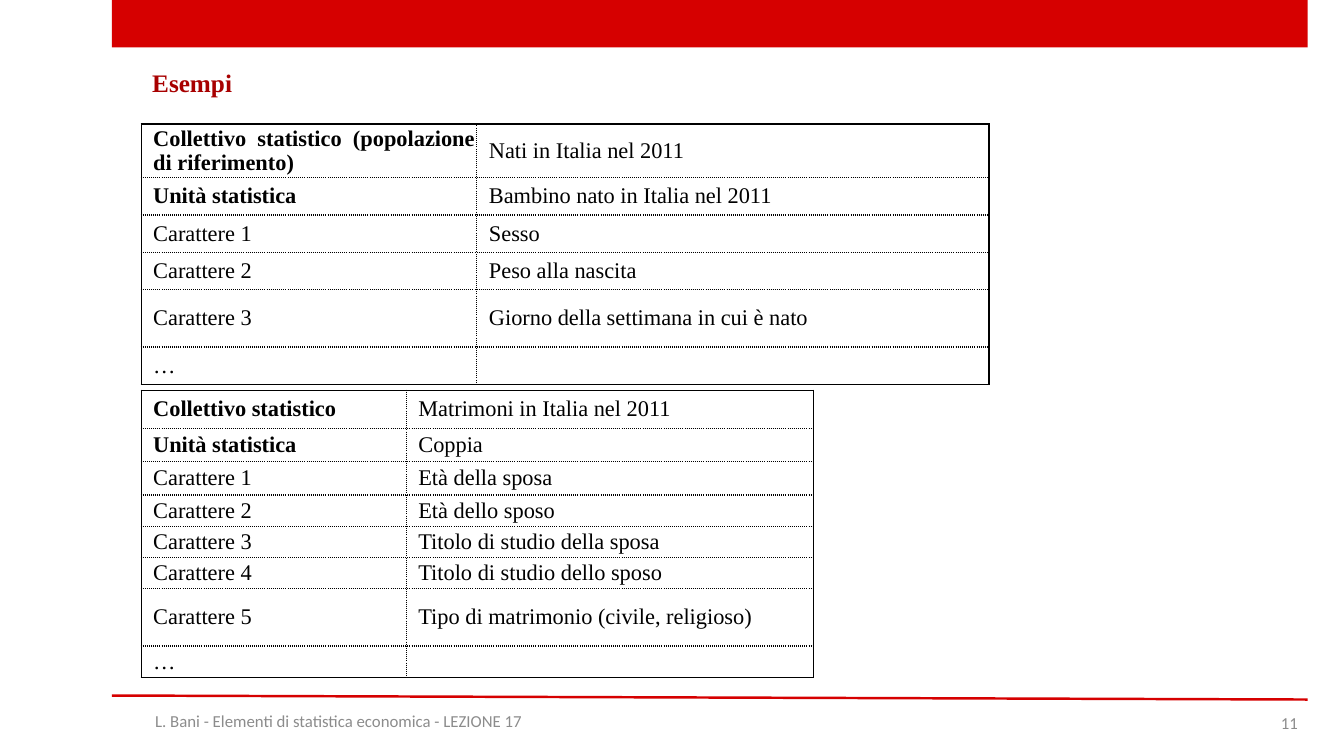
from dataclasses import dataclass

from lxml import etree
from pptx import Presentation
from pptx.dml.color import RGBColor
from pptx.enum.shapes import MSO_CONNECTOR as Connector, MSO_SHAPE as Shape
from pptx.enum.text import MSO_ANCHOR as Anchor, PP_ALIGN as Align
from pptx.oxml.ns import qn
from pptx.util import Inches, Pt

# Content
TITLE = "Esempi"
FOOTER = "L. Bani - Elementi di statistica economica - LEZIONE 17"
PAGE_NUMBER = "11"
TABLES = [
    {
        "top": 1.23,
        "columns": [3.33, 5.08],
        "rows": [
            (0.53, "Collettivo statistico (popolazione di riferimento)",
             "Nati in Italia nel 2011"),
            (0.37, "Unità statistica", "Bambino nato in Italia nel 2011"),
            (0.37, "Carattere 1", "Sesso"),
            (0.37, "Carattere 2", "Peso alla nascita"),
            (0.57, "Carattere 3", "Giorno della settimana in cui è nato"),
            (0.37, "…", ""),
        ],
    },
    {
        "top": 3.87,
        "columns": [2.63, 4.04],
        "rows": [
            (0.38, "Collettivo statistico", "Matrimoni in Italia nel 2011"),
            (0.33, "Unità statistica", "Coppia"),
            (0.33, "Carattere 1", "Età della sposa"),
            (0.31, "Carattere 2", "Età dello sposo"),
            (0.31, "Carattere 3", "Titolo di studio della sposa"),
            (0.31, "Carattere 4", "Titolo di studio dello sposo"),
            (0.57, "Carattere 5", "Tipo di matrimonio (civile, religioso)"),
            (0.3, "…", ""),
        ],
    },
]


@dataclass(frozen=True)
class Theme:
    red: str = "D60000"
    dark_red: str = "A80000"
    black: str = "000000"
    grey: str = "8C8C8C"
    serif: str = "Times New Roman"
    sans: str = "Calibri"
    title_size: int = 18
    table_size: int = 16
    footer_size: int = 12


THEME = Theme()
LEFT, RIGHT = 1.11, 12.97
TITLE_LEFT, TABLE_LEFT = 1.41, 1.4
CELL_MARGIN = Inches(0.02)
CELL_INDENT = Inches(0.1)
BOLD_ROWS = 2


def write(frame, text, font, size, color, bold=False, align=Align.LEFT,
          indent=0, line_spacing=None):
    """Put one formatted paragraph in a text frame."""
    frame.word_wrap = True
    paragraph = frame.paragraphs[0]
    paragraph.alignment = align
    paragraph.line_spacing = line_spacing
    if indent:
        properties = paragraph._p.get_or_add_pPr()
        properties.set("marL", str(indent))
        properties.set("indent", "0")
    if not text:
        end = etree.SubElement(paragraph._p, qn("a:endParaRPr"))
        end.set("sz", str(size * 100))
        return
    run = paragraph.add_run()
    run.text = text
    run.font.name = font
    run.font.size = Pt(size)
    run.font.bold = bold
    run.font.color.rgb = RGBColor.from_string(color)


def set_borders(cell, solid_sides):
    """Draw solid lines on the given sides and dotted lines on the others."""
    properties = cell._tc.get_or_add_tcPr()
    for side in "LRTB":
        line = etree.SubElement(properties, qn(f"a:ln{side}"), w=str(Pt(1)))
        fill = etree.SubElement(line, qn("a:solidFill"))
        etree.SubElement(fill, qn("a:srgbClr"), val=THEME.black)
        dash = "solid" if side in solid_sides else "sysDot"
        etree.SubElement(line, qn("a:prstDash"), val=dash)


def add_example_table(slide, top, columns, rows):
    heights = [row[0] for row in rows]
    table = slide.shapes.add_table(
        len(rows), len(columns), Inches(TABLE_LEFT), Inches(top),
        Inches(sum(columns)), Inches(sum(heights))).table
    table.first_row = table.horz_banding = False
    for column, width in zip(table.columns, columns):
        column.width = Inches(width)
    last = len(rows) - 1
    for row_index, (height, *texts) in enumerate(rows):
        table.rows[row_index].height = Inches(height)
        for column_index, text in enumerate(texts):
            cell = table.cell(row_index, column_index)
            cell.margin_left = cell.margin_right = CELL_MARGIN
            cell.margin_top = cell.margin_bottom = CELL_MARGIN
            cell.vertical_anchor = Anchor.MIDDLE
            solid_sides = "LR"[column_index]
            solid_sides += "T" if row_index == 0 else ""
            solid_sides += "B" if row_index == last else ""
            set_borders(cell, solid_sides)
            cell.fill.background()
            justified = row_index < last and (
                column_index == 0 or row_index == 0)
            write(cell.text_frame, text, THEME.serif, THEME.table_size,
                  THEME.black,
                  bold=column_index == 0 and row_index < BOLD_ROWS,
                  align=Align.JUSTIFY if justified else Align.LEFT,
                  indent=CELL_INDENT)


def add_footer_text(slide, text, left, top, width, align):
    box = slide.shapes.add_textbox(
        Inches(left), Inches(top), Inches(width), Inches(0.4))
    box.text_frame.vertical_anchor = Anchor.MIDDLE
    write(box.text_frame, text, THEME.sans, THEME.footer_size, THEME.grey,
          align=align)


def main():
    presentation = Presentation()
    presentation.slide_width = Inches(13.33)
    presentation.slide_height = Inches(7.5)
    slide = presentation.slides.add_slide(presentation.slide_layouts[5])
    red = RGBColor.from_string(THEME.red)

    # Top band
    band = slide.shapes.add_shape(
        Shape.RECTANGLE, Inches(LEFT), 0, Inches(RIGHT - LEFT), Inches(0.47))
    band.shadow.inherit = False
    band.fill.solid()
    band.fill.fore_color.rgb = red
    band.line.fill.background()

    # Footer rule
    rule = slide.shapes.add_connector(
        Connector.STRAIGHT, Inches(LEFT), Inches(6.9),
        Inches(RIGHT), Inches(6.94))
    rule.line.color.rgb = red
    rule.line.width = Pt(1.75)
    etree.SubElement(rule._element.spPr, qn("a:effectLst"))

    # Title
    title = slide.shapes.title
    title.left, title.top = Inches(TITLE_LEFT), Inches(0.59)
    title.width, title.height = Inches(1.2), Inches(0.49)
    title.text_frame.vertical_anchor = Anchor.MIDDLE
    write(title.text_frame, TITLE, THEME.serif, THEME.title_size,
          THEME.dark_red, bold=True, line_spacing=0.9)

    # Example tables
    for example in TABLES:
        add_example_table(slide, **example)

    # Footer and page number
    add_footer_text(slide, FOOTER, LEFT, 6.95, 4.5, Align.CENTER)
    add_footer_text(slide, PAGE_NUMBER, RIGHT - 3, 6.97, 3, Align.RIGHT)

    presentation.save("out.pptx")


if __name__ == "__main__":
    main()
